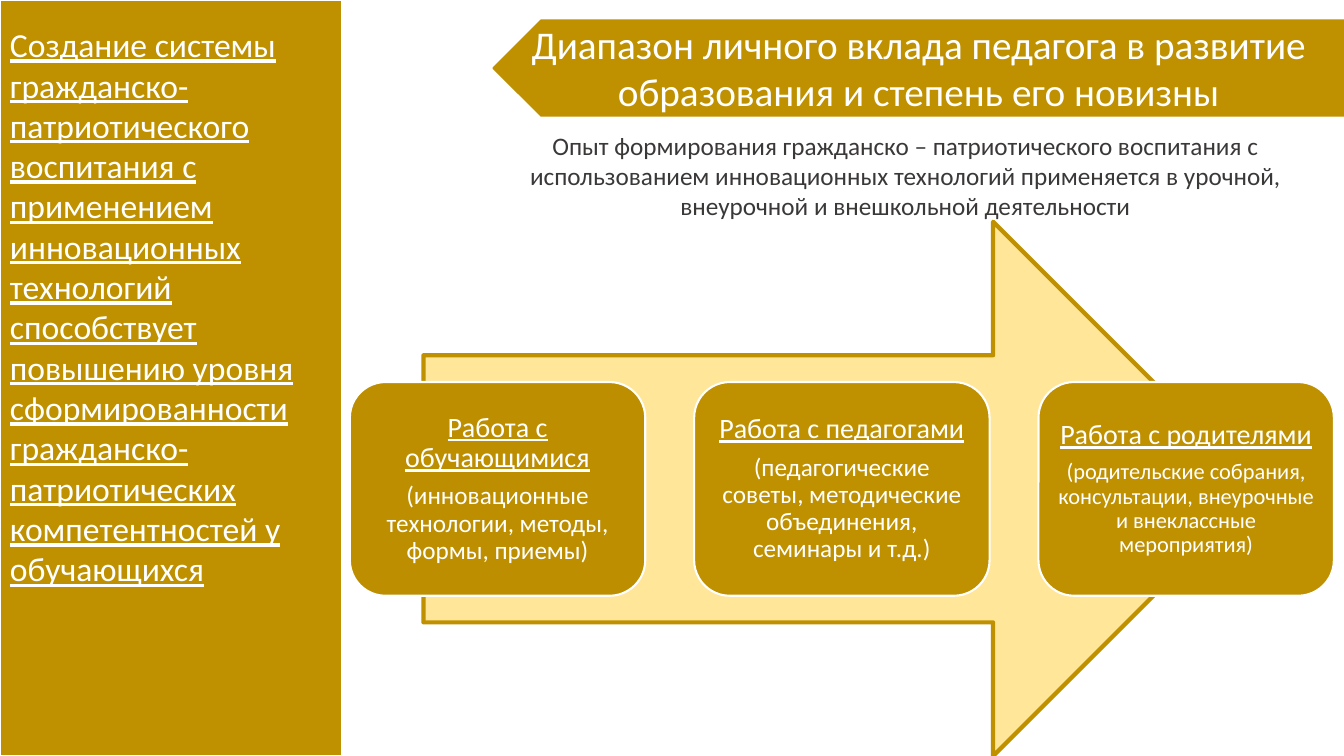
import pptx
import pptx.util
import pptx.dml.color
import pptx.enum.shapes
import pptx.enum.text

Inches, Pt = pptx.util.Inches, pptx.util.Pt
SHAPE = pptx.enum.shapes.MSO_SHAPE
ALIGN = pptx.enum.text.PP_ALIGN
ANCHOR = pptx.enum.text.MSO_ANCHOR

# Content
TITLE = "Диапазон личного вклада педагога в развитие образования и степень его новизны"
INTRO = ("Опыт формирования гражданско – патриотического воспитания с использованием "
         "инновационных технологий применяется в урочной, внеурочной и внешкольной деятельности")
GOAL = ("Создание системы гражданско-патриотического воспитания с применением "
        "инновационных технологий способствует повышению уровня сформированности "
        "гражданско-патриотических компетентностей у обучающихся")
CARDS = [  # heading, details, details size, fill
    ("Работа с обучающимися",
     "(инновационные технологии, методы, формы, приемы)", 18, "BD8E00"),
    ("Работа с педагогами",
     "(педагогические советы, методические объединения, семинары и т.д.)", 18, "BF9000"),
    ("Работа с родителями",
     "(родительские собрания, консультации, внеурочные и внеклассные мероприятия)", 16, "BF9000"),
]
GOLD, PALE, WHITE, GREY = "BF9000", "FFE699", "FFFFFF", "3B3838"

# Layout, in inches
W, H = 13.33, 7.5
SIDE_W = 3.39
CARD_X, CARD_Y, CARD_W, CARD_H, CARD_STEP = 3.47, 3.79, 2.93, 2.12, 3.415


def rgb(color):
    return pptx.dml.color.RGBColor.from_string(color)


def place(sp, box):
    for name, value in zip(("left", "top", "width", "height"), box):
        setattr(sp, name, Inches(value))


def add_block(kind, box, fill, line, width):
    sp = s.shapes.add_shape(kind, *map(Inches, box))
    sp.shadow.inherit = False
    sp.fill.solid()
    sp.fill.fore_color.rgb = rgb(fill)
    sp.line.color.rgb = rgb(line)
    sp.line.width = Pt(width)
    return sp


def write(sp, lines, color=WHITE, align=ALIGN.CENTER, spacing=1.0, after=0,
          inset=(0.1, 0.05), anchor=ANCHOR.TOP):
    """Fill a shape with (text, size, underline) paragraphs."""
    tf = sp.text_frame
    frame = {"word_wrap": True, "auto_size": pptx.enum.text.MSO_AUTO_SIZE.NONE,
             "vertical_anchor": anchor,
             "margin_left": Inches(inset[0]), "margin_right": Inches(inset[0]),
             "margin_top": Inches(inset[1]), "margin_bottom": Inches(inset[1])}
    for name, value in frame.items():
        setattr(tf, name, value)
    for i, (text, size, underline) in enumerate(lines):
        p = tf.add_paragraph() if i else tf.paragraphs[0]
        para = {"alignment": align, "line_spacing": spacing,
                "space_before": Pt(0), "space_after": Pt(after)}
        for name, value in para.items():
            setattr(p, name, value)
        r = p.add_run()
        r.text = text
        font = {"name": "Calibri", "size": Pt(size), "underline": underline}
        for name, value in font.items():
            setattr(r.font, name, value)
        r.font.color.rgb = rgb(color)


prs = pptx.Presentation()
prs.slide_width, prs.slide_height = Inches(W), Inches(H)
s = prs.slides.add_slide(prs.slide_layouts[5])

# Side panel and title banner
add_block(SHAPE.RECTANGLE, (0, 0, SIDE_W, H), GOLD, WHITE, 1)
banner = add_block(SHAPE.PENTAGON, (4.89, 0.2, W - 4.89, 0.95), GOLD, GOLD, 1)
banner.rotation = 180

# Title, brought in front of its banner
title = s.shapes.title
place(title, (5.17, 0.15, 7.88, 1.04))
write(title, [(TITLE, 28, False)])
banner.element.addnext(title.element)

# Introduction and side text
intro = s.shapes.add_textbox(*map(Inches, (4.63, 1.24, W - 4.63, 1.01)))
write(intro, [(INTRO, 18, False)], GREY)
goal = s.shapes.add_textbox(*map(Inches, (0, 0.19, SIDE_W, 5.76)))
write(goal, [(GOAL, 24, True)], align=ALIGN.LEFT)

# Arrow with the three directions of work
add_block(SHAPE.RIGHT_ARROW, (4.2, 2.2, 8.3, 5.3), PALE, GOLD, 3)
for i, (heading, details, size, fill) in enumerate(CARDS):
    box = (CARD_X + i * CARD_STEP, CARD_Y, CARD_W, CARD_H)
    card = add_block(SHAPE.ROUNDED_RECTANGLE, box, fill, WHITE, 1.5)
    write(card, [(heading, 20, True), (details, size, False)], spacing=0.9,
          after=7, inset=(0.08, 0.08), anchor=ANCHOR.MIDDLE)

prs.save("out.pptx")
